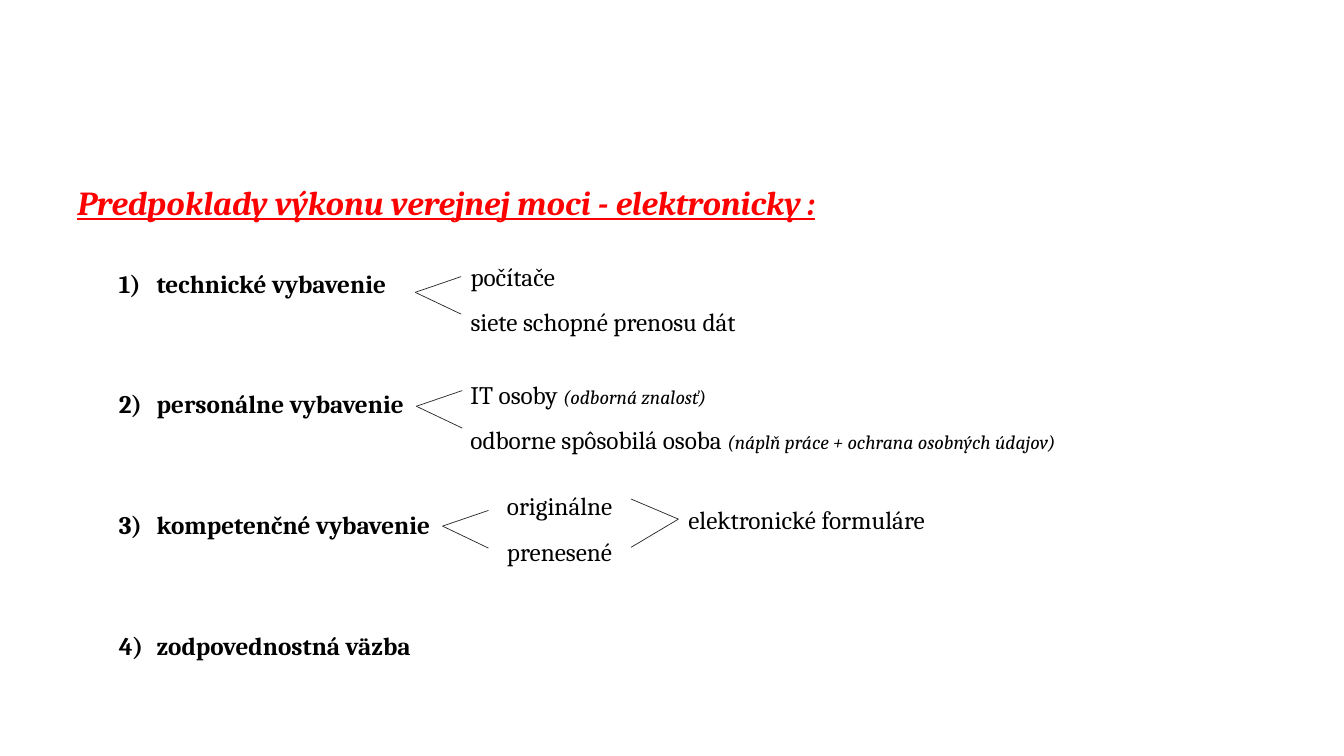
import pptx
import pptx.dml.color
import pptx.enum.dml
import pptx.enum.shapes
import pptx.enum.text
import pptx.util
import lxml.etree
import pptx.oxml.ns

Pt = pptx.util.Pt
COLORS = {"title": "FF0000", "text": "000000", "line": "262626"}
FORMATS = {
    "title": {"size": Pt(24), "bold": True, "italic": True, "underline": True},
    "heading": {"size": Pt(18), "bold": True},
    "body": {"size": Pt(18)},
    "note": {"size": Pt(14), "italic": True},
}

presentation = pptx.Presentation()
presentation.slide_width = Pt(960)
presentation.slide_height = Pt(540)
slide = presentation.slides.add_slide(presentation.slide_layouts[6])


def add_text(left, top, width, height, lines, spacing=None):
    text_box = slide.shapes.add_textbox(Pt(left), Pt(top), Pt(width), Pt(height))
    frame = text_box.text_frame
    frame.word_wrap = False
    frame.auto_size = pptx.enum.text.MSO_AUTO_SIZE.SHAPE_TO_FIT_TEXT
    for index, runs in enumerate(lines):
        paragraph = frame.paragraphs[0] if index == 0 else frame.add_paragraph()
        if spacing:
            paragraph.line_spacing = spacing
        for text, style in runs:
            run = paragraph.add_run()
            run.text = text
            run.font.name = "Cambria"
            color = COLORS["title" if style == "title" else "text"]
            run.font.color.rgb = pptx.dml.color.RGBColor.from_string(color)
            for name, value in FORMATS[style].items():
                setattr(run.font, name, value)
    return frame


add_text(48.2, 126.7, 545.8, 36,
         [[("Predpoklady výkonu verejnej moci - elektronicky :", "title")]])

requirements = ["technické vybavenie", "personálne vybavenie",
                "kompetenčné vybavenie", "zodpovednostná väzba"]
numbered = add_text(77.8, 187.9, 243.4, 290.9,
                    [[(requirement, "heading")] for requirement in requirements])
for index, paragraph in enumerate(numbered.paragraphs):
    if index:
        paragraph.space_before = Pt(64.6)
    properties = paragraph._p.get_or_add_pPr()
    properties.set("marL", str(Pt(27)))
    properties.set("indent", str(-Pt(27)))
    lxml.etree.SubElement(properties, pptx.oxml.ns.qn("a:buFont"), typeface="+mj-lt")
    lxml.etree.SubElement(properties, pptx.oxml.ns.qn("a:buAutoNum"), type="arabicParenR")

details = [
    (329, 172.1, 216.7, 72.7, [[("počítače", "body")],
                               [("siete schopné prenosu dát", "body")]]),
    (329, 256.3, 455.8, 72.7, [
        [("IT osoby ", "body"), ("(odborná znalosť)", "note")],
        [("odborne spôsobilá osoba ", "body"),
         ("(náplň práce + ochrana osobných údajov)", "note")]]),
    (355, 336.2, 95, 68.4, [[("originálne", "body")], [("prenesené", "body")]]),
]
for left, top, width, height, lines in details:
    add_text(left, top, width, height, lines, 1.5)
add_text(484.6, 356.4, 193, 28.8, [[("elektronické formuláre", "body")]])

brackets = [
    (296.6, 208.8, 329.4, 197.6, 224.4),
    (297.4, 290.2, 330.2, 279, 305.8),
    (316.1, 375.8, 348.9, 364.6, 391.5),
    (484.6, 370.8, 450.7, 356.4, 391),
]
for tip_x, tip_y, end_x, upper_y, lower_y in brackets:
    for end_y in (upper_y, lower_y):
        connector = slide.shapes.add_connector(
            pptx.enum.shapes.MSO_CONNECTOR.STRAIGHT,
            Pt(tip_x), Pt(tip_y), Pt(end_x), Pt(end_y))
        connector.line.width = Pt(0.5)
        connector.line.color.rgb = pptx.dml.color.RGBColor.from_string(COLORS["line"])
        lxml.etree.SubElement(connector._element.spPr, pptx.oxml.ns.qn("a:effectLst"))

presentation.save("out.pptx")
